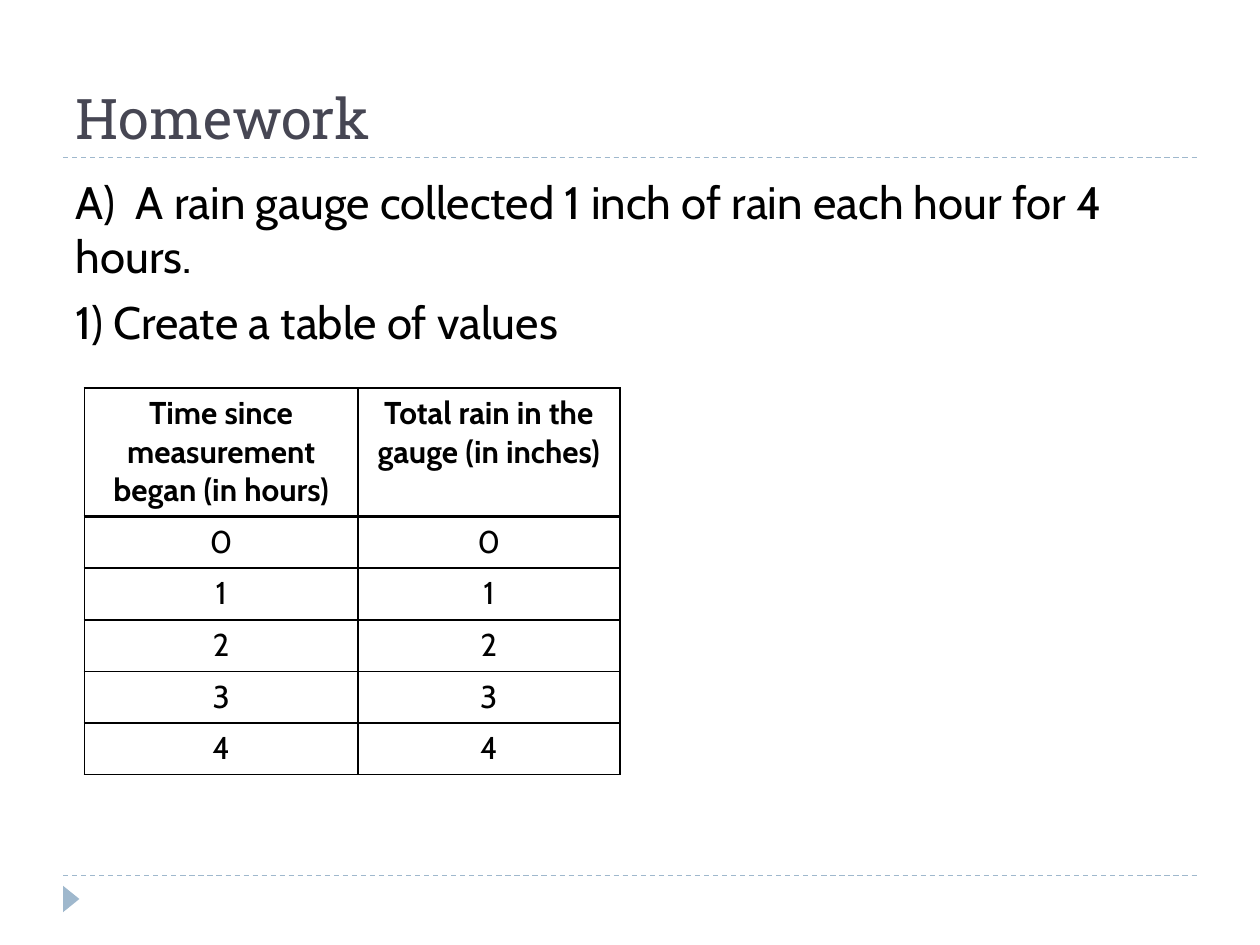
from lxml import etree
from pptx import Presentation
from pptx import util as u
from pptx.dml.color import RGBColor
from pptx.enum import dml, shapes, text
from pptx.oxml import ns

PX = 9144  # 100 px to the inch
BLACK = RGBColor(0x00, 0x00, 0x00)
SLATE = RGBColor(0x46, 0x46, 0x53)
MIST = RGBColor(0x9F, 0xB8, 0xCD)

TITLE_FONT = {"name": "Roboto Slab", "size": u.Pt(32), "bold": False}
BODY_FONT = {"name": "Cabin", "size": u.Pt(26), "bold": False}
CELL_FONT = {"name": "Cabin", "size": u.Pt(18), "bold": False}
HEAD_FONT = {**CELL_FONT, "bold": True}

QUESTIONS = [
    "A)  A rain gauge collected 1 inch of rain each hour for 4 hours.",
    "1) Create a table of values",
]
HEADINGS = ["Time since measurement began (in hours)",
            "Total rain in the gauge (in inches)"]
READINGS = [(hour, hour) for hour in range(5)]


def emu(*lengths):
    return [u.Emu(length * PX) for length in lengths]


def place(item, box):
    item.left, item.top, item.width, item.height = emu(*box)


def write(para, words, values, color, align):
    span = para.add_run()
    span.text = words
    for name, value in values.items():
        setattr(span.font, name, value)
    span.font.color.rgb = color
    para.alignment = align


def add_rule(page, left, top, width):
    rule = page.shapes.add_connector(
        shapes.MSO_CONNECTOR.STRAIGHT, *emu(left, top, left + width, top))
    rule.line.color.rgb = MIST
    rule.line.width = u.Pt(0.75)
    rule.line.dash_style = dml.MSO_LINE.DASH
    etree.SubElement(rule._element.spPr, ns.qn("a:effectLst"))


def add_frame(page, box):
    """Dashed rules under the title and above the footer, with a marker."""
    left, top, width, height = box
    add_rule(page, left, top + height, width)
    add_rule(page, left, top, width)
    marker = page.shapes.add_shape(
        shapes.MSO_SHAPE.ISOSCELES_TRIANGLE,
        *emu(left - 4, top + height + 12, 21, 13))
    marker.rotation = 90
    marker.shadow.inherit = False
    marker.fill.solid()
    marker.fill.fore_color.rgb = MIST
    marker.line.fill.background()


def fill_title(page, box):
    title = page.shapes.title
    place(title, box)
    frame = title.text_frame
    frame.auto_size = text.MSO_AUTO_SIZE.NONE
    frame.vertical_anchor = text.MSO_ANCHOR.BOTTOM
    write(frame.paragraphs[0], "Homework", TITLE_FONT, SLATE, text.PP_ALIGN.LEFT)


def fill_body(page, box):
    body = page.placeholders[1]
    place(body, box)
    frame = body.text_frame
    frame.auto_size = text.MSO_AUTO_SIZE.NONE
    for index, question in enumerate(QUESTIONS):
        para = frame.add_paragraph() if index else frame.paragraphs[0]
        para.space_before = u.Pt(6)
        write(para, question, BODY_FONT, BLACK, text.PP_ALIGN.LEFT)
        # No bullet and no hanging indent
        settings = para._p.get_or_add_pPr()
        settings.set("marL", "0")
        settings.set("indent", "0")
        etree.SubElement(settings, ns.qn("a:buNone"))


def add_borders(cell, widths):
    settings = cell._tc.get_or_add_tcPr()
    for side, width in widths.items():
        line = etree.SubElement(settings, ns.qn(f"a:ln{side}"), w=str(u.Pt(width)))
        solid = etree.SubElement(line, ns.qn("a:solidFill"))
        etree.SubElement(solid, ns.qn("a:srgbClr"), val=str(BLACK))


def add_readings(page, box, columns, head_height):
    rows = [HEADINGS, *READINGS]
    table = page.shapes.add_table(len(rows), len(columns), *emu(*box)).table
    table.first_row = table.horz_banding = False
    for column, width in zip(table.columns, columns):
        column.width = u.Emu(width * PX)
    row_height = (box[3] - head_height) // len(READINGS)
    for index, values in enumerate(rows):
        is_head = index == 0
        table.rows[index].height = u.Emu((row_height if index else head_height) * PX)
        widths = {"L": 1, "R": 1, "T": 2 if index == 1 else 1, "B": 2 if is_head else 1}
        for cell, value in zip(table.rows[index].cells, values):
            add_borders(cell, widths)
            cell.fill.background()
            write(cell.text_frame.paragraphs[0], str(value),
                  HEAD_FONT if is_head else CELL_FONT, BLACK, text.PP_ALIGN.CENTER)


def main():
    deck = Presentation()
    deck.slide_width, deck.slide_height = emu(1000, 750)
    page = deck.slides.add_slide(deck.slide_layouts[1])
    add_frame(page, (50, 125, 900, 570))
    fill_title(page, (50, 17, 900, 108))
    fill_body(page, (50, 133, 900, 540))
    add_readings(page, (67, 308, 425, 307), (217, 208), 102)
    deck.save("out.pptx")


if __name__ == "__main__":
    main()
